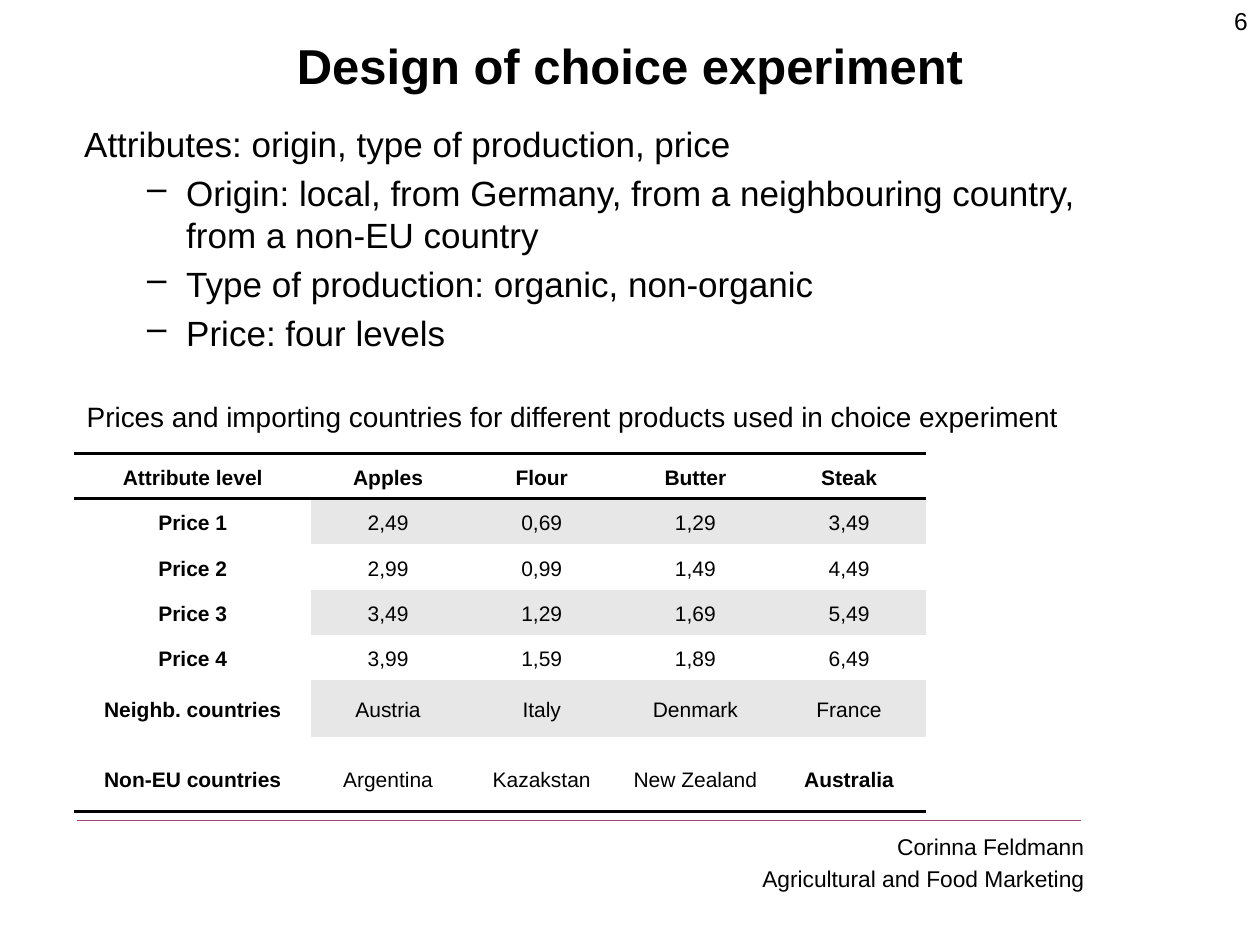
from lxml import etree
from pptx import Presentation, util as u
from pptx.dml.color import RGBColor
from pptx.enum import shapes, text
from pptx.oxml.ns import qn

COLORS = {"ink": "000000", "paper": "FFFFFF", "band": "E7E7E7", "rule": "A4427A"}
FONT = "Arial"
LEFT, CENTER, RIGHT = text.PP_ALIGN.LEFT, text.PP_ALIGN.CENTER, text.PP_ALIGN.RIGHT

# Content
TITLE = "Design of choice experiment"
INTRO = "Attributes: origin, type of production, price"
ATTRIBUTES = [
    "Origin: local, from Germany, from a neighbouring country, from a non-EU country",
    "Type of production: organic, non-organic",
    "Price: four levels",
]
CAPTION = "Prices and importing countries for different products used in choice experiment"
FOOTER = ["Corinna Feldmann", "Agricultural and Food Marketing"]
PAGE = "6"
LEVELS = [
    ["Attribute level", "Apples", "Flour", "Butter", "Steak"],
    ["Price 1", "2,49", "0,69", "1,29", "3,49"],
    ["Price 2", "2,99", "0,99", "1,49", "4,49"],
    ["Price 3", "3,49", "1,29", "1,69", "5,49"],
    ["Price 4", "3,99", "1,59", "1,89", "6,49"],
    ["Neighb. countries", "Austria", "Italy", "Denmark", "France"],
    ["Non-EU countries", "Argentina", "Kazakstan", "New Zealand", "Australia"],
]
COL_WIDTHS = [1.88] + [1.22] * 4
ROW_HEIGHTS = [0.36] * 5 + [0.45, 0.59]


def rgb(name):
    return RGBColor.from_string(COLORS[name])


def write(tf, lines, size, bold=False, align=LEFT, before=0, spacing=None, dash_from=None):
    """Fill a text frame; lines from index dash_from on get a dash bullet."""
    tf.word_wrap = True
    for i, line in enumerate(lines):
        p = tf.paragraphs[0] if i == 0 else tf.add_paragraph()
        p.alignment = align
        p.space_before = u.Pt(before if i else 0)
        if spacing:
            p.line_spacing = spacing
        if dash_from is not None and i >= dash_from:
            p.level = 1
            ppr = p._p.get_or_add_pPr()
            ppr.set("marL", str(u.Inches(0.81)))
            ppr.set("indent", str(u.Inches(-0.31)))
            etree.SubElement(ppr, qn("a:buChar")).set("char", "–")
        r = p.add_run()
        r.text = line
        r.font.name, r.font.size, r.font.bold = FONT, u.Pt(size), bold
        r.font.color.rgb = rgb("ink")


def add_text(s, box, lines, size, **fmt):
    tf = s.shapes.add_textbox(*map(u.Inches, box)).text_frame
    write(tf, lines, size, **fmt)


def set_borders(cell, ruled):
    """Draw the named sides in ink and switch the others off."""
    tcpr = cell._tc.get_or_add_tcPr()
    for side in "LRTB":
        ln = etree.SubElement(tcpr, qn(f"a:ln{side}"))
        if side in ruled:
            ln.set("w", str(u.Pt(2)))
            fill = etree.SubElement(ln, qn("a:solidFill"))
            etree.SubElement(fill, qn("a:srgbClr")).set("val", COLORS["ink"])
        else:
            etree.SubElement(ln, qn("a:noFill"))


def add_levels_table(s, left, top):
    rows, cols = len(LEVELS), len(COL_WIDTHS)
    size = (left, top, sum(COL_WIDTHS), sum(ROW_HEIGHTS))
    table = s.shapes.add_table(rows, cols, *map(u.Inches, size)).table
    table.first_row = table.horz_banding = False
    for column, width in zip(table.columns, COL_WIDTHS):
        column.width = u.Inches(width)
    for row, height in zip(table.rows, ROW_HEIGHTS):
        row.height = u.Inches(height)
    last = rows - 1
    ruled = {0: "TB", 1: "T", last: "B"}
    for i, values in enumerate(LEVELS):
        for j, value in enumerate(values):
            cell = table.cell(i, j)
            cell.vertical_anchor = text.MSO_ANCHOR.MIDDLE
            cell.margin_left = cell.margin_right = u.Inches(0.05)
            cell.margin_top = cell.margin_bottom = 0
            set_borders(cell, ruled.get(i, ""))
            cell.fill.solid()
            cell.fill.fore_color.rgb = rgb("band" if i % 2 and j else "paper")
            bold = i == 0 or j == 0 or (i, j) == (last, cols - 1)
            write(cell.text_frame, [value], 12, bold=bold, align=CENTER,
                  spacing=1.5 if i == last else 1.15)


def main():
    prs = Presentation()
    prs.slide_width, prs.slide_height = u.Inches(10), u.Inches(7.5)
    s = prs.slides.add_slide(prs.slide_layouts[5])

    # Title
    title = s.shapes.title
    title.left, title.top, title.width, title.height = map(u.Inches, (0.5, 0.05, 9, 0.93))
    title.text_frame.vertical_anchor = text.MSO_ANCHOR.MIDDLE
    write(title.text_frame, [TITLE], 28, bold=True, align=CENTER)

    # Footer and its rule
    add_text(s, (4.53, 6.56, 4.17, 0.58), FOOTER, 13, align=RIGHT, before=2.6)
    rule = s.shapes.add_connector(shapes.MSO_CONNECTOR.STRAIGHT,
                                  *map(u.Inches, (0.61, 6.51, 8.58, 6.51)))
    rule.line.color.rgb = rgb("rule")
    rule.line.width = u.Pt(0.75)
    etree.SubElement(rule._element.spPr, qn("a:effectLst"))

    # Price table, attribute list, caption and page number
    add_levels_table(s, 0.59, 3.6)
    add_text(s, (0.57, 0.92, 8.37, 2.03), [INTRO] + ATTRIBUTES, 20, before=4, dash_from=1)
    add_text(s, (0.59, 3.12, 8.74, 0.37), [CAPTION], 16)
    add_text(s, (9.49, 0, 0.51, 0.52), [PAGE], 14, align=RIGHT)

    prs.save("out.pptx")


if __name__ == "__main__":
    main()
